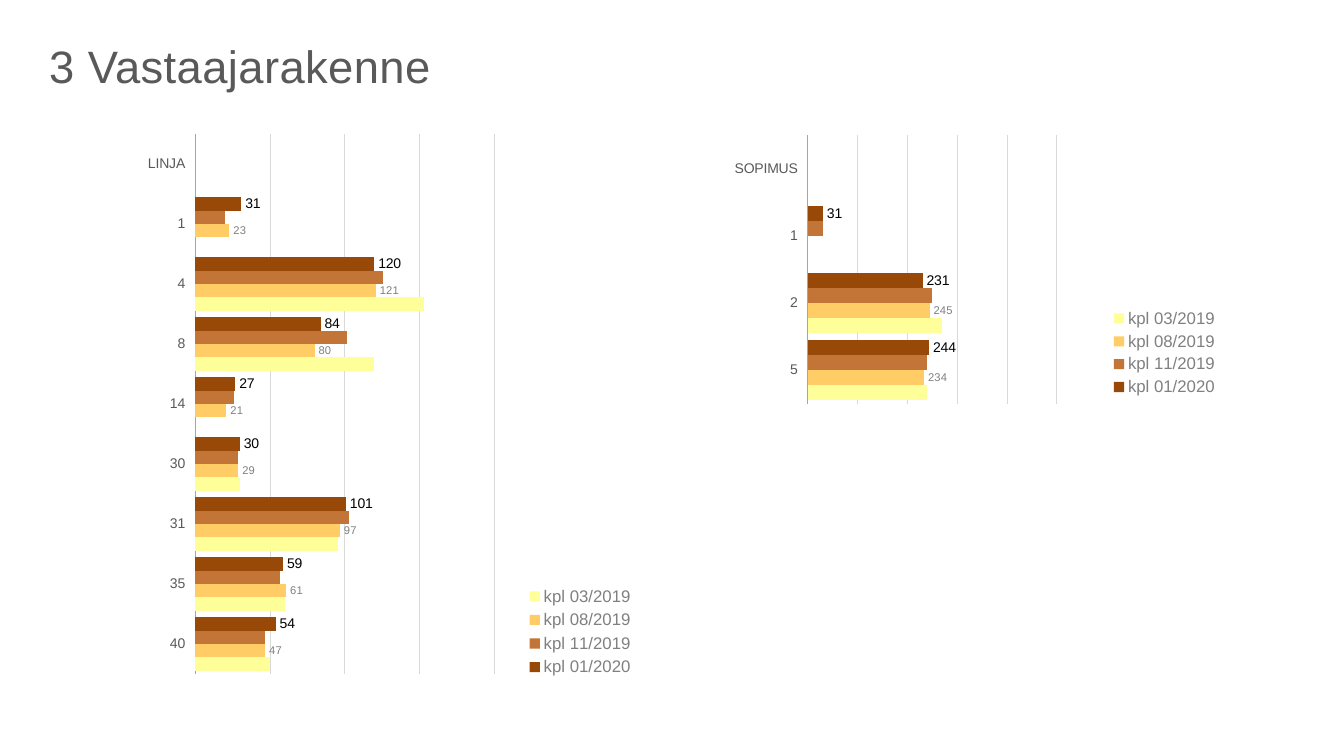
from dataclasses import dataclass
from typing import Optional

from lxml.etree import SubElement
from pptx import Presentation
from pptx.chart.data import CategoryChartData
from pptx.dml.color import RGBColor
from pptx.enum.chart import (
    XL_CHART_TYPE as ChartType,
    XL_LABEL_POSITION as LabelPosition,
    XL_LEGEND_POSITION as LegendPosition,
    XL_TICK_LABEL_POSITION as TickLabelPosition,
    XL_TICK_MARK as TickMark,
)
from pptx.enum.text import MSO_ANCHOR
from pptx.oxml import parse_xml
from pptx.oxml.ns import nsdecls, qn
from pptx.util import Cm, Pt

FONT = "Arial"
Values = tuple[Optional[int], ...]


@dataclass(frozen=True)
class Frame:
    left: float
    top: float
    width: float
    height: float


@dataclass(frozen=True)
class SurveyRound:
    name: str
    color: str
    label_size: Optional[int] = None
    label_color: str = "000000"


@dataclass(frozen=True)
class RespondentChart:
    frame: Frame
    plot: Frame
    legend: Frame
    maximum: int
    major_unit: int
    categories: tuple[str, ...]
    values: tuple[Values, ...]


ROUNDS = (
    SurveyRound("kpl 01/2020", "984807", 10),
    SurveyRound("kpl 11/2019", "C37537"),
    SurveyRound("kpl 08/2019", "FFCC66", 8, "808080"),
    SurveyRound("kpl 03/2019", "FFFF99"),
)

CHARTS = (
    RespondentChart(
        Frame(3.02, 3.18, 13.26, 14), Frame(0.143, 0.014, 0.568, 0.972),
        Frame(0.77, 0.82, 0.21, 0.18), 200, 50,
        ("LINJA", "1", "4", "8", "14", "30", "31", "35", "40"),
        (
            (None, 31, 120, 84, 27, 30, 101, 59, 54),
            (None, 20, 126, 102, 26, 29, 103, 57, 47),
            (None, 23, 121, 80, 21, 29, 97, 61, 47),
            (None, None, 153, 120, None, 30, 96, 60, 50),
        ),
    ),
    RespondentChart(
        Frame(17.86, 2.97, 12.98, 7.59), Frame(0.192, 0.057, 0.532, 0.892),
        Frame(0.78, 0.62, 0.21, 0.32), 550, 100,
        ("SOPIMUS", "1", "2", "5"),
        (
            (None, 31, 231, 244),
            (None, 30, 250, 240),
            (None, None, 245, 234),
            (None, None, 270, 240),
        ),
    ),
)


def rgb(color: str) -> RGBColor:
    return RGBColor.from_string(color)


def set_font(font, size: float, color: str) -> None:
    font.name = FONT
    font.size = Pt(size)
    font.color.rgb = rgb(color)


def set_line(line, color: str, width: float) -> None:
    line.color.rgb = rgb(color)
    line.width = Pt(width)


def lengths(frame: Frame) -> tuple[Cm, Cm, Cm, Cm]:
    return Cm(frame.left), Cm(frame.top), Cm(frame.width), Cm(frame.height)


def manual_layout(frame: Frame, inner: bool = False):
    """Build a chart layout from fractions of the chart area."""
    layout = parse_xml(f"<c:layout {nsdecls('c')}><c:manualLayout/></c:layout>")
    settings = [("layoutTarget", "inner")] if inner else []
    settings += [("xMode", "edge"), ("yMode", "edge"), ("x", frame.left),
                 ("y", frame.top), ("w", frame.width), ("h", frame.height)]
    for tag, value in settings:
        SubElement(layout[0], qn(f"c:{tag}")).set("val", str(value))
    return layout


def drop_layout(element) -> None:
    for layout in element.findall(qn("c:layout")):
        element.remove(layout)


def style_axes(chart, item: RespondentChart) -> None:
    categories = chart.category_axis
    categories.reverse_order = True
    categories.major_tick_mark = categories.minor_tick_mark = TickMark.NONE
    categories.tick_label_position = TickLabelPosition.LOW
    categories.has_major_gridlines = False
    set_font(categories.tick_labels.font, 10, "595959")
    set_line(categories.format.line, "A6A6A6", 0.75)

    values = chart.value_axis
    values.minimum_scale, values.maximum_scale = 0, item.maximum
    values.major_unit = item.major_unit
    values.has_major_gridlines = True
    set_line(values.major_gridlines.format.line, "D9D9D9", 0.25)
    values.visible = False


def style_series(series, survey_round: SurveyRound) -> None:
    series.format.fill.solid()
    series.format.fill.fore_color.rgb = rgb(survey_round.color)
    series.invert_if_negative = False
    if survey_round.label_size:
        labels = series.data_labels
        set_font(labels.font, survey_round.label_size, survey_round.label_color)
        labels.show_value = True
        labels.position = LabelPosition.OUTSIDE_END


def add_legend(chart, frame: Frame) -> None:
    chart.has_legend = True
    legend = chart.legend
    legend.position = LegendPosition.RIGHT
    legend.include_in_layout = False
    set_font(legend.font, 12, "808080")
    element = legend._element
    drop_layout(element)
    element.find(qn("c:overlay")).addprevious(manual_layout(frame))


def add_respondent_chart(slide, item: RespondentChart) -> None:
    data = CategoryChartData()
    data.categories = item.categories
    for survey_round, values in zip(ROUNDS, item.values):
        data.add_series(survey_round.name, values)
    chart = slide.shapes.add_chart(
        ChartType.BAR_CLUSTERED, *lengths(item.frame), data).chart
    chart.has_title = False
    set_font(chart.font, 18, "000000")
    plot = chart.plots[0]
    plot.gap_width, plot.overlap = 50, 0
    plot.vary_by_categories = False
    style_axes(chart, item)
    for series, survey_round in zip(plot.series, ROUNDS):
        style_series(series, survey_round)
    add_legend(chart, item.legend)
    plot_area = chart._chartSpace.chart.plotArea
    drop_layout(plot_area)
    plot_area.insert(0, manual_layout(item.plot, inner=True))


def add_title(slide, text: str, frame: Frame) -> None:
    text_frame = slide.shapes.add_textbox(*lengths(frame)).text_frame
    text_frame.word_wrap = True
    text_frame.vertical_anchor = MSO_ANCHOR.TOP
    paragraph = text_frame.paragraphs[0]
    paragraph.line_spacing = 1.1
    run = paragraph.add_run()
    run.text = text
    set_font(run.font, 32.4, "595959")
    run.font._element.set("spc", "30")


def main() -> None:
    presentation = Presentation()
    presentation.slide_width, presentation.slide_height = Cm(33.87), Cm(19.05)
    slide = presentation.slides.add_slide(presentation.slide_layouts[6])
    add_title(slide, "3 Vastaajarakenne", Frame(0.99, 0.7, 27.25, 1.37))
    for item in CHARTS:
        add_respondent_chart(slide, item)
    presentation.save("out.pptx")


if __name__ == "__main__":
    main()
